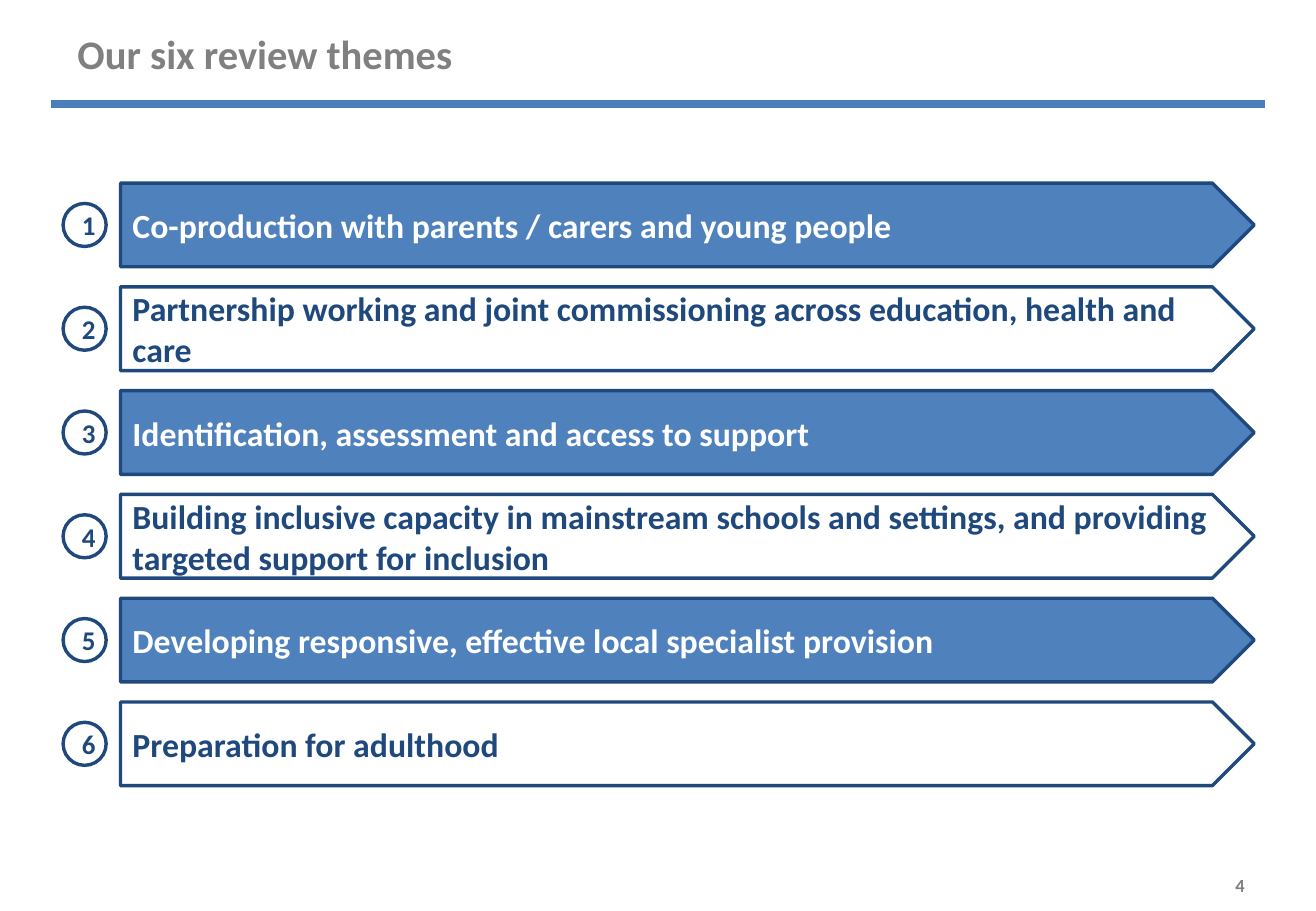
from dataclasses import dataclass

from lxml.etree import SubElement
from pptx import Presentation
from pptx.dml.color import RGBColor
from pptx.enum.shapes import MSO_CONNECTOR, MSO_SHAPE
from pptx.enum.text import MSO_ANCHOR, PP_ALIGN
from pptx.oxml.ns import qn
from pptx.slide import Slide
from pptx.text.text import TextFrame
from pptx.util import Cm, Pt

WHITE = RGBColor(0xFF, 0xFF, 0xFF)
BLUE = RGBColor(0x4F, 0x81, 0xBD)
NAVY = RGBColor(0x1F, 0x49, 0x7D)
RULE = RGBColor(0x4B, 0x7E, 0xBC)
GREY = RGBColor(0x80, 0x80, 0x80)

TOP, PITCH = 3.83, 2.17
BAR_LEFT, BAR_WIDTH, BAR_HEIGHT = 2.52, 23.7, 1.75
DOT_LEFT, DOT_SIZE = 1.32, 0.9


@dataclass
class Box:
    kind: MSO_SHAPE
    left: float
    top: float
    width: float
    height: float
    fill: RGBColor


@dataclass
class Theme:
    text: str
    fill: RGBColor
    ink: RGBColor


THEMES = [
    Theme("Co-production with parents / carers and young people", BLUE, WHITE),
    Theme("Partnership working and joint commissioning across education, "
          "health and care", WHITE, NAVY),
    Theme("Identification, assessment and access to support", BLUE, WHITE),
    Theme("Building inclusive capacity in mainstream schools and settings, "
          "and providing targeted support for inclusion", WHITE, NAVY),
    Theme("Developing responsive, effective local specialist provision", BLUE, WHITE),
    Theme("Preparation for adulthood", WHITE, NAVY),
]


def write(frame: TextFrame, text: str, *, size: float, color: RGBColor,
          align: PP_ALIGN = PP_ALIGN.LEFT, left: float = 0.25,
          right: float = 0.25) -> None:
    frame.word_wrap = True
    frame.vertical_anchor = MSO_ANCHOR.MIDDLE
    frame.margin_left, frame.margin_right = Cm(left), Cm(right)
    frame.margin_top = frame.margin_bottom = 0
    line = frame.paragraphs[0]
    line.text = text
    line.alignment = align
    font = line.font
    font.name, font.size, font.bold = "Calibri", Pt(size), True
    font.color.rgb = color


def draw_box(slide: Slide, box: Box) -> TextFrame:
    shape = slide.shapes.add_shape(box.kind, Cm(box.left), Cm(box.top),
                                   Cm(box.width), Cm(box.height))
    shape.shadow.inherit = False
    shape.fill.solid()
    shape.fill.fore_color.rgb = box.fill
    shape.line.color.rgb = NAVY
    shape.line.width = Pt(2)
    return shape.text_frame


def draw_theme(slide: Slide, rank: int, theme: Theme) -> None:
    top = TOP + rank * PITCH
    bar = Box(MSO_SHAPE.PENTAGON, BAR_LEFT, top, BAR_WIDTH, BAR_HEIGHT, theme.fill)
    write(draw_box(slide, bar), theme.text, size=20, color=theme.ink)
    dot = Box(MSO_SHAPE.OVAL, DOT_LEFT, top + (BAR_HEIGHT - DOT_SIZE) / 2,
              DOT_SIZE, DOT_SIZE, WHITE)
    write(draw_box(slide, dot), str(rank + 1), size=16, color=NAVY,
          align=PP_ALIGN.CENTER, left=0.17, right=0)


def draw_rule(slide: Slide) -> None:
    rule = slide.shapes.add_connector(MSO_CONNECTOR.STRAIGHT, Cm(1.07), Cm(2.18),
                                      Cm(26.44), Cm(2.18))
    rule.line.color.rgb = RULE
    rule.line.width = Pt(5)
    SubElement(rule.element.spPr, qn("a:effectLst"))


def main() -> None:
    deck = Presentation()
    deck.slide_width, deck.slide_height = Cm(27.51), Cm(19.05)
    slide = deck.slides.add_slide(deck.slide_layouts[5])
    draw_rule(slide)

    title = slide.shapes.title
    title.left, title.top = Cm(1.37), Cm(-0.1)
    title.width, title.height = Cm(24.77), Cm(2.41)
    write(title.text_frame, "Our six review themes", size=24, color=GREY)

    page = slide.shapes.add_textbox(Cm(19.84), Cm(17.96), Cm(6.43), Cm(1.09))
    write(page.text_frame, "4", size=11, color=GREY, align=PP_ALIGN.RIGHT)

    for rank, theme in enumerate(THEMES):
        draw_theme(slide, rank, theme)
    deck.save("out.pptx")


if __name__ == "__main__":
    main()
